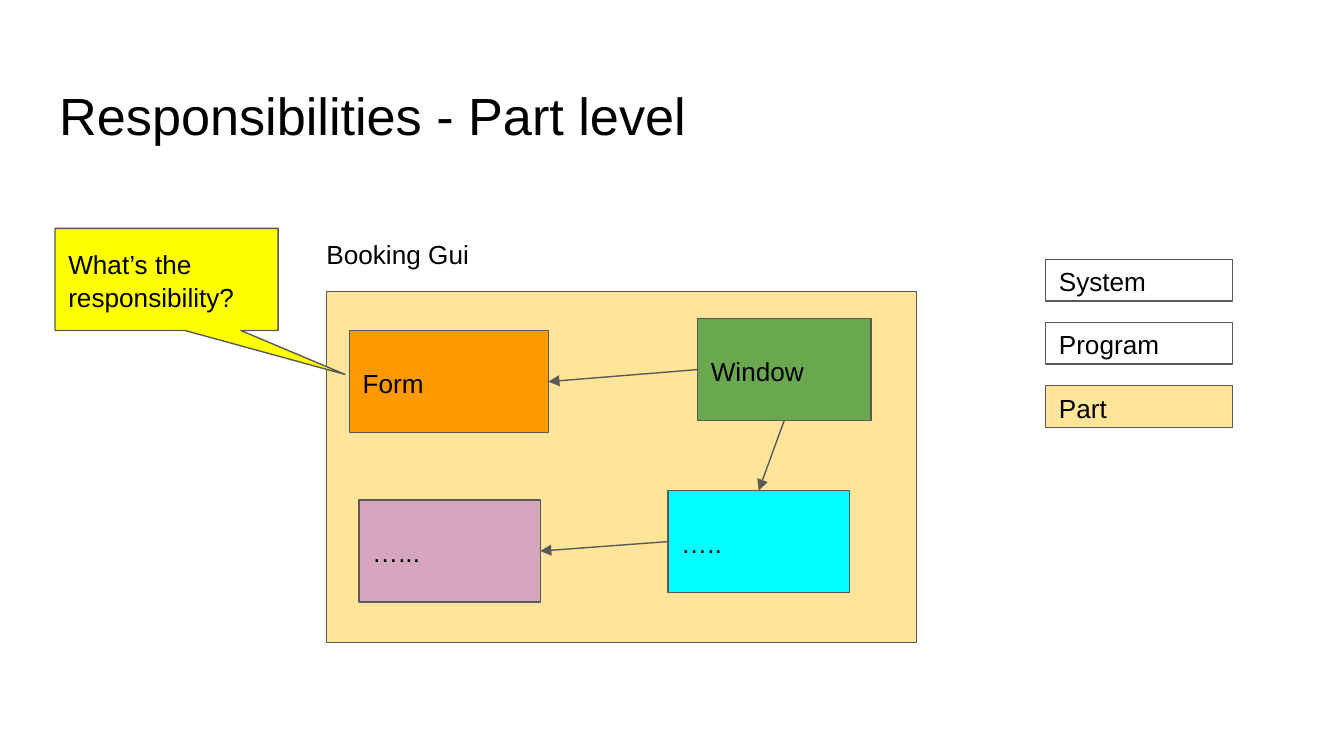
from collections import namedtuple

from lxml.etree import SubElement
from pptx import Presentation
from pptx.dml.color import RGBColor
from pptx.enum.shapes import MSO_CONNECTOR, MSO_SHAPE
from pptx.enum.text import MSO_ANCHOR, PP_ALIGN
from pptx.oxml.ns import qn
from pptx.util import Inches, Pt

# The grid is square: 100 columns over the width of the slide
SLIDE_WIDTH, SLIDE_HEIGHT = 10, 5.625
UNIT = SLIDE_WIDTH / 100
TOP, LEFT, BOTTOM, RIGHT = range(4)
LINE, SAND = "595959", "FFE599"

Box = namedtuple("Box", "left top width height")


def color(value):
    return RGBColor.from_string(value)


def place(box):
    return [Inches(length * UNIT) for length in box]


def inside(box, left, top, width, height):
    return Box(box.left + left, box.top + top, width, height)


def write(shape, text, size=14, anchor=MSO_ANCHOR.MIDDLE, ink="000000"):
    frame = shape.text_frame
    frame.word_wrap = True
    frame.vertical_anchor = anchor
    frame.margin_left = frame.margin_right = Inches(0.1)
    frame.margin_top = frame.margin_bottom = Inches(0.1)
    para = frame.paragraphs[0]
    para.alignment = PP_ALIGN.LEFT
    para.line_spacing = 1.07
    para.space_before = Pt(0)
    span = para.add_run()
    span.text = text
    span.font.name = "Arial"
    span.font.size = Pt(size)
    span.font.color.rgb = color(ink)


def add_block(page, box, fill=None, text="", kind=MSO_SHAPE.RECTANGLE):
    shape = page.shapes.add_shape(kind, *place(box))
    shape.shadow.inherit = False
    if fill:
        shape.fill.solid()
        shape.fill.fore_color.rgb = color(fill)
    else:
        shape.fill.background()
    shape.line.color.rgb = color(LINE)
    shape.line.width = Pt(0.75)
    if text:
        write(shape, text)
    return shape


def add_arrow(page, start, start_side, end, end_side):
    arrow = page.shapes.add_connector(MSO_CONNECTOR.STRAIGHT, 0, 0, 0, 0)
    arrow.begin_connect(start, start_side)
    arrow.end_connect(end, end_side)
    arrow.line.color.rgb = color(LINE)
    arrow.line.width = Pt(0.75)
    SubElement(arrow.line._get_or_add_ln(), qn("a:tailEnd"), type="triangle")
    SubElement(arrow._element.spPr, qn("a:effectLst"))


def add_title(page, box):
    title = page.shapes.title
    title.left, title.top, title.width, title.height = place(box)
    write(title, "Responsibilities - Part level", size=28, anchor=MSO_ANCHOR.TOP)


def add_diagram(page, box):
    add_block(page, box, SAND)
    caption = page.shapes.add_textbox(*place(inside(box, -1, -5.1, 54.5, 6.4)))
    write(caption, "Booking Gui", anchor=MSO_ANCHOR.TOP)

    # Parts of the program: left, top, width, fill and label
    parts = [
        (1.7, 2.9, 14.8, "FF9900", "Form"),
        (27.6, 2, 12.9, "6AA84F", "Window"),
        (2.4, 15.5, 13.5, "D5A6BD", "…..."),
        (25.4, 14.8, 13.5, "00FFFF", "….."),
    ]
    form, window, left_part, right_part = [
        add_block(page, inside(box, left, top, width, 7.6), fill, label)
        for left, top, width, fill, label in parts
    ]

    # Calls between the parts
    add_arrow(page, window, LEFT, form, RIGHT)
    add_arrow(page, window, BOTTOM, right_part, TOP)
    add_arrow(page, right_part, LEFT, left_part, RIGHT)


def add_question(page, box):
    callout = add_block(page, box, "FFFF00", "What’s the responsibility?",
                        MSO_SHAPE.ROUNDED_RECTANGULAR_CALLOUT)
    for index, value in enumerate((0.8, 0.93, 0)):
        callout.adjustments[index] = value


def add_levels(page, box):
    levels = [("System", None), ("Program", None), ("Part", SAND)]
    height = 3.1
    step = (box.height - height) / (len(levels) - 1)
    for row, (label, fill) in enumerate(levels):
        add_block(page, inside(box, 0, row * step, box.width, height), fill, label)


def main():
    deck = Presentation()
    deck.slide_width, deck.slide_height = Inches(SLIDE_WIDTH), Inches(SLIDE_HEIGHT)
    page = deck.slides.add_slide(deck.slide_layouts.get_by_name("Title Only"))
    page.background.fill.solid()
    page.background.fill.fore_color.rgb = color("FFFFFF")

    add_title(page, Box(3.4, 4.9, 93.2, 6.3))
    add_diagram(page, Box(24.3, 21.7, 43.9, 26.1))
    add_question(page, Box(4.1, 17, 16.6, 7.6))
    add_levels(page, Box(77.8, 19.3, 13.9, 12.5))
    deck.save("out.pptx")


if __name__ == "__main__":
    main()
